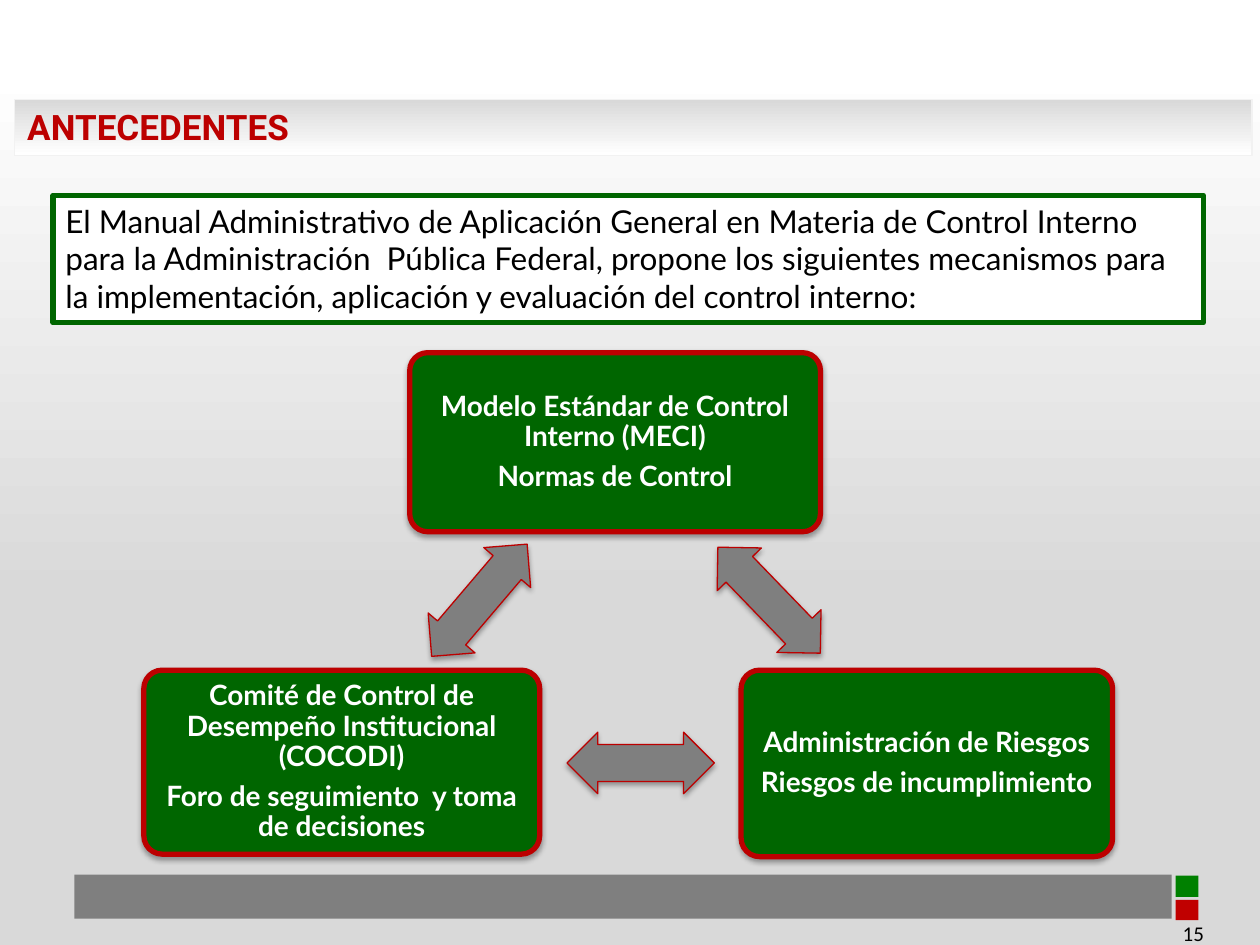
from dataclasses import dataclass

from lxml import etree
from pptx import Presentation
from pptx.dml.color import RGBColor
from pptx.enum.shapes import MSO_SHAPE
from pptx.enum.text import MSO_ANCHOR, PP_ALIGN
from pptx.oxml.ns import qn
from pptx.util import Cm, Pt

RECT = MSO_SHAPE.RECTANGLE
ROUNDED = MSO_SHAPE.ROUNDED_RECTANGLE
DOUBLE_ARROW = MSO_SHAPE.LEFT_RIGHT_ARROW
TOP, MIDDLE = MSO_ANCHOR.TOP, MSO_ANCHOR.MIDDLE
LEFT, CENTER, RIGHT = PP_ALIGN.LEFT, PP_ALIGN.CENTER, PP_ALIGN.RIGHT


@dataclass(frozen=True)
class Theme:
    white: str = "FFFFFF"
    black: str = "000000"
    pale: str = "F2F2F2"
    silver: str = "D9D9D9"
    gray: str = "7F7F7F"
    green: str = "006600"
    flag_green: str = "008000"
    red: str = "BC0000"
    flag_red: str = "C00000"
    body_font: str = "Lato"
    title_font: str = "Roboto"
    number_font: str = "Calibri"
    title_size: int = 20
    intro_size: int = 18
    box_size: int = 16
    number_size: int = 12
    thick: float = 3
    thin: float = 0.75


class SlideBuilder:
    def __init__(self, slide, theme):
        self.slide = slide
        self.theme = theme

    def shape(self, kind, place, fill=None, line=None, width=0):
        item = self.slide.shapes.add_shape(kind, *map(Cm, place))
        item.shadow.inherit = False
        if fill:
            item.fill.solid()
            item.fill.fore_color.rgb = RGBColor.from_string(fill)
        if line:
            item.line.color.rgb = RGBColor.from_string(line)
            item.line.width = Pt(width)
        else:
            item.line.fill.background()
        return item

    def fade(self, item, stops):
        """Fill with a gradient that runs from bottom to top."""
        item.fill.gradient()
        item.fill.gradient_angle = 90
        for stop, (position, color) in zip(item.fill.gradient_stops, stops):
            stop.position = position
            stop.color.rgb = RGBColor.from_string(color)

    def cast_shadow(self, item):
        effects = item._element.spPr.find(qn("a:effectLst"))
        shadow = etree.SubElement(
            effects, qn("a:outerShdw"), blurRad=str(Pt(3.1)),
            dist=str(Pt(1.8)), dir="5400000", rotWithShape="0")
        color = etree.SubElement(shadow, qn("a:srgbClr"), val=self.theme.black)
        etree.SubElement(color, qn("a:alpha"), val="35000")

    def set_text(self, item, lines, font, color, align=LEFT, anchor=TOP,
                 spacing=None, margin=None):
        frame = item.text_frame
        frame.word_wrap = True
        frame.vertical_anchor = anchor
        if margin is not None:
            for side in ("left", "top", "right", "bottom"):
                setattr(frame, f"margin_{side}", Cm(margin))
        for index, line in enumerate(lines):
            paragraph = frame.add_paragraph() if index else frame.paragraphs[0]
            paragraph.text = line
            paragraph.alignment = align
            for name, value in (spacing or {}).items():
                setattr(paragraph, name, value)
            for name, value in font.items():
                setattr(paragraph.font, name, value)
            paragraph.font.color.rgb = RGBColor.from_string(color)

    def mechanism(self, place, lines):
        t = self.theme
        box = self.shape(ROUNDED, place, t.green, t.red, t.thick)
        box.adjustments[0] = 0.1
        self.cast_shadow(box)
        self.set_text(
            box, lines,
            {"name": t.body_font, "size": Pt(t.box_size), "bold": True},
            t.white, CENTER, MIDDLE,
            {"line_spacing": 0.9, "space_after": Pt(5.6)}, margin=0.28)

    def link(self, left, top, rotation):
        t = self.theme
        arrow = self.shape(DOUBLE_ARROW, (left, top, 2.97, 1.24),
                           t.gray, t.red, t.thin)
        arrow.adjustments[0] = 0.6
        arrow.adjustments[1] = 0.5
        arrow.rotation = rotation
        self.cast_shadow(arrow)

    def backdrop(self):
        t = self.theme
        background = self.shape(RECT, (0, 0, 25.4, 19.15))
        self.fade(background, [(0.37, t.silver), (0.93, t.white)])
        for place, color in [
            ((23.7, 18.14, 0.46, 0.41), t.flag_red),
            ((23.7, 17.65, 0.46, 0.43), t.flag_green),
            ((1.5, 17.63, 22.12, 0.89), t.gray),
        ]:
            self.shape(RECT, place, color)

    def page_number(self, number):
        t = self.theme
        box = self.slide.shapes.add_textbox(
            *map(Cm, (18.8, 18.31, 5.72, 1.02)))
        self.set_text(box, [number],
                      {"name": t.number_font, "size": Pt(t.number_size)},
                      t.black, RIGHT, MIDDLE)

    def intro(self, text):
        t = self.theme
        box = self.shape(RECT, (1.07, 3.94, 23.19, 2.57),
                         t.white, t.green, t.thick)
        self.set_text(box, [text],
                      {"name": t.body_font, "size": Pt(t.intro_size)}, t.black)

    def title(self, text):
        t = self.theme
        band = self.shape(RECT, (0.3, 2.01, 24.94, 1.12),
                          line=t.pale, width=t.thin)
        self.fade(band, [(0, t.white), (1, t.silver)])
        self.set_text(band, [text],
                      {"name": t.title_font, "size": Pt(t.title_size),
                       "bold": True}, t.red)


def main():
    deck = Presentation()
    deck.slide_width, deck.slide_height = Cm(25.4), Cm(19.05)
    builder = SlideBuilder(deck.slides.add_slide(deck.slide_layouts[6]),
                           Theme())

    builder.backdrop()
    builder.page_number("15")

    mechanisms = [
        ((8.26, 7.11, 8.28, 3.61),
         ["Modelo Estándar de Control Interno (MECI)", "Normas de Control"]),
        ((14.94, 13.51, 7.49, 3.76),
         ["Administración de Riesgos", "Riesgos de incumplimiento"]),
        ((2.9, 13.51, 7.98, 3.71),
         ["Comité de Control de Desempeño Institucional (COCODI)",
          "Foro de seguimiento  y toma de decisiones"]),
    ]
    links = [(14.02, 11.48, 46), (11.43, 14.76, 180), (8.18, 11.48, 310.4)]
    for (place, lines), link in zip(mechanisms, links):
        builder.mechanism(place, lines)
        builder.link(*link)

    builder.intro(
        "El Manual Administrativo de Aplicación General en Materia de Control "
        "Interno para la Administración  Pública Federal, propone los "
        "siguientes mecanismos para la implementación, aplicación y "
        "evaluación del control interno:")
    builder.title("ANTECEDENTES")
    deck.save("out.pptx")


if __name__ == "__main__":
    main()
